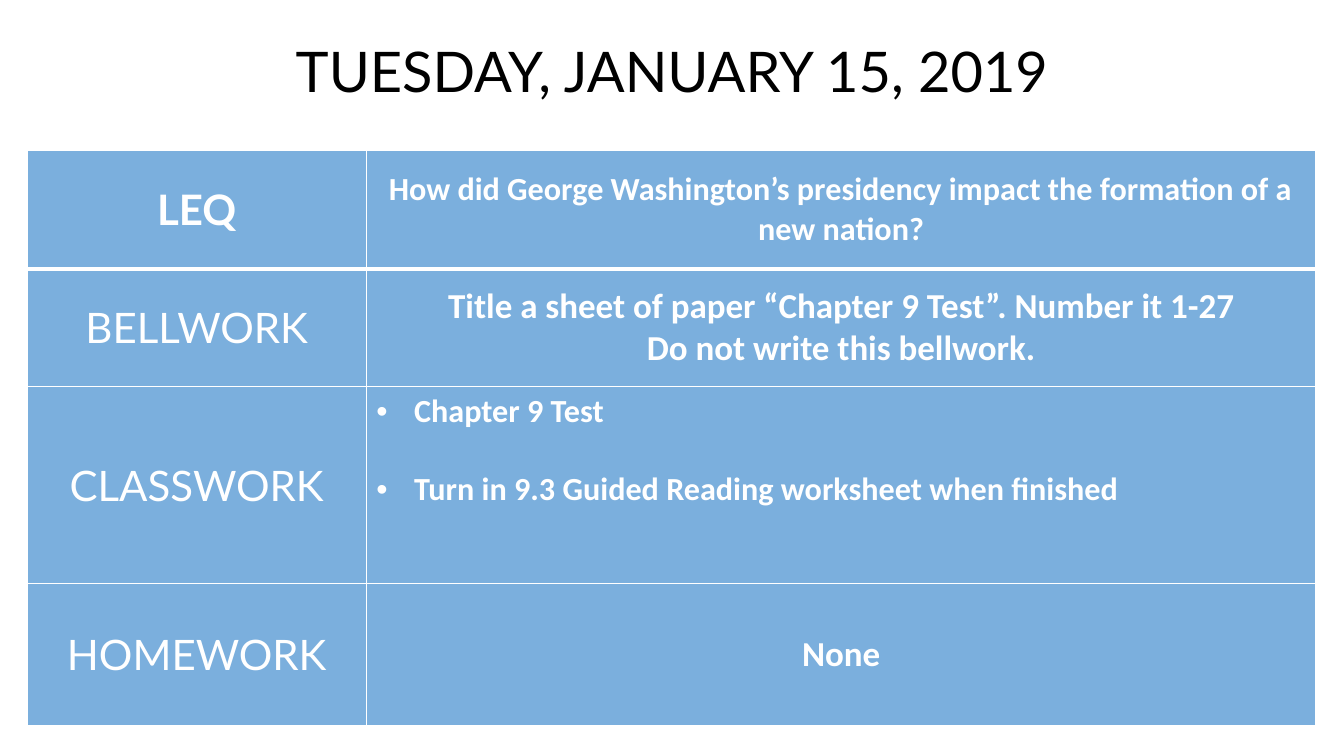
from lxml import etree
from pptx import Presentation
from pptx.dml.color import RGBColor
from pptx.enum.text import MSO_ANCHOR, MSO_AUTO_SIZE, PP_ALIGN
from pptx.oxml.ns import qn
from pptx.util import Pt

CENTER, LEFT = PP_ALIGN.CENTER, PP_ALIGN.LEFT
MIDDLE, TOP = MSO_ANCHOR.MIDDLE, MSO_ANCHOR.TOP
COLORS = {"white": "FFFFFF", "black": "000000", "blue": "5B9BD5"}
LEFT_EDGE, TABLE_TOP = 19.6, 107.5
COLUMN_WIDTHS = [242, 678.5]
LABEL = {"name": "Lato", "size": Pt(30), "bold": False}
HEADING = {**LABEL, "bold": True}
QUESTION = {"name": "Calibri", "size": Pt(23), "bold": True}
NOTE = {**QUESTION, "size": Pt(25)}

# Row height, label, label format, content lines, content format, bulleted
AGENDA = [
    (84.5, "LEQ", HEADING,
     ["How did George Washington’s presidency impact the formation of a new nation?"],
     QUESTION, False),
    (84, "BELLWORK", LABEL,
     ["Title a sheet of paper “Chapter 9 Test”. Number it 1-27",
      "Do not write this bellwork."], NOTE, False),
    (141, "CLASSWORK", LABEL,
     ["Chapter 9 Test", "Turn in 9.3 Guided Reading worksheet when finished"],
     QUESTION, True),
    (101, "HOMEWORK", LABEL, ["None"], NOTE, False),
]


def set_fill(fill, color, opacity):
    """Apply a solid fill with an opacity in percent."""
    fill.solid()
    fill.fore_color.rgb = RGBColor.from_string(COLORS[color])
    color_element = fill._xPr.find(qn("a:solidFill"))[0]
    etree.SubElement(color_element, qn("a:alpha"), val=str(opacity * 1000))


def write_lines(text_frame, lines, font_format, color, bulleted=False):
    for index, line in enumerate(lines):
        paragraph = text_frame.paragraphs[0] if index == 0 else text_frame.add_paragraph()
        paragraph.alignment = LEFT if bulleted else CENTER
        if bulleted:
            if index:
                paragraph.space_before = Pt(28)
            properties = paragraph._p.get_or_add_pPr()
            properties.set("marL", str(Pt(27)))
            properties.set("indent", str(Pt(-27)))
            etree.SubElement(properties, qn("a:buFont"), typeface="Arial")
            etree.SubElement(properties, qn("a:buChar"), char="•")
        run = paragraph.add_run()
        run.text = line
        for name, value in font_format.items():
            setattr(run.font, name, value)
        run.font.color.rgb = RGBColor.from_string(COLORS[color])


presentation = Presentation()
presentation.slide_width, presentation.slide_height = Pt(960), Pt(540)
slide = presentation.slides.add_slide(presentation.slide_layouts[5])

title = slide.shapes.title
title.left, title.top = Pt(LEFT_EDGE), Pt(14.4)
title.width, title.height = Pt(sum(COLUMN_WIDTHS)), Pt(72)
set_fill(title.fill, "white", 65)
title.text_frame.auto_size = MSO_AUTO_SIZE.NONE
title.text_frame.vertical_anchor = MIDDLE
write_lines(title.text_frame, ["TUESDAY, JANUARY 15, 2019"],
            {**LABEL, "size": Pt(40)}, "black")

table = slide.shapes.add_table(
    len(AGENDA), len(COLUMN_WIDTHS), Pt(LEFT_EDGE), Pt(TABLE_TOP),
    Pt(sum(COLUMN_WIDTHS)), Pt(sum(row[0] for row in AGENDA))).table
for column, width in zip(table.columns, COLUMN_WIDTHS):
    column.width = Pt(width)

for row_index, (height, label, label_format, lines, line_format, bulleted) in enumerate(AGENDA):
    table.rows[row_index].height = Pt(height)
    label_cell, content_cell = table.rows[row_index].cells
    write_lines(label_cell.text_frame, [label], label_format, "white")
    write_lines(content_cell.text_frame, lines, line_format, "white", bulleted)
    label_cell.vertical_anchor = MIDDLE
    content_cell.vertical_anchor = TOP if bulleted else MIDDLE

    border_widths = {"lnL": 1, "lnR": 1,
                     "lnT": 3 if row_index == 1 else 1,
                     "lnB": 3 if row_index == 0 else 1}
    for cell in (label_cell, content_cell):
        set_fill(cell.fill, "blue", 80)
        properties = cell._tc.get_or_add_tcPr()
        for position, (side, width) in enumerate(border_widths.items()):
            border = etree.Element(qn(f"a:{side}"), w=str(Pt(width)))
            solid_fill = etree.SubElement(border, qn("a:solidFill"))
            etree.SubElement(solid_fill, qn("a:srgbClr"), val=COLORS["white"])
            properties.insert(position, border)

presentation.save("out.pptx")
